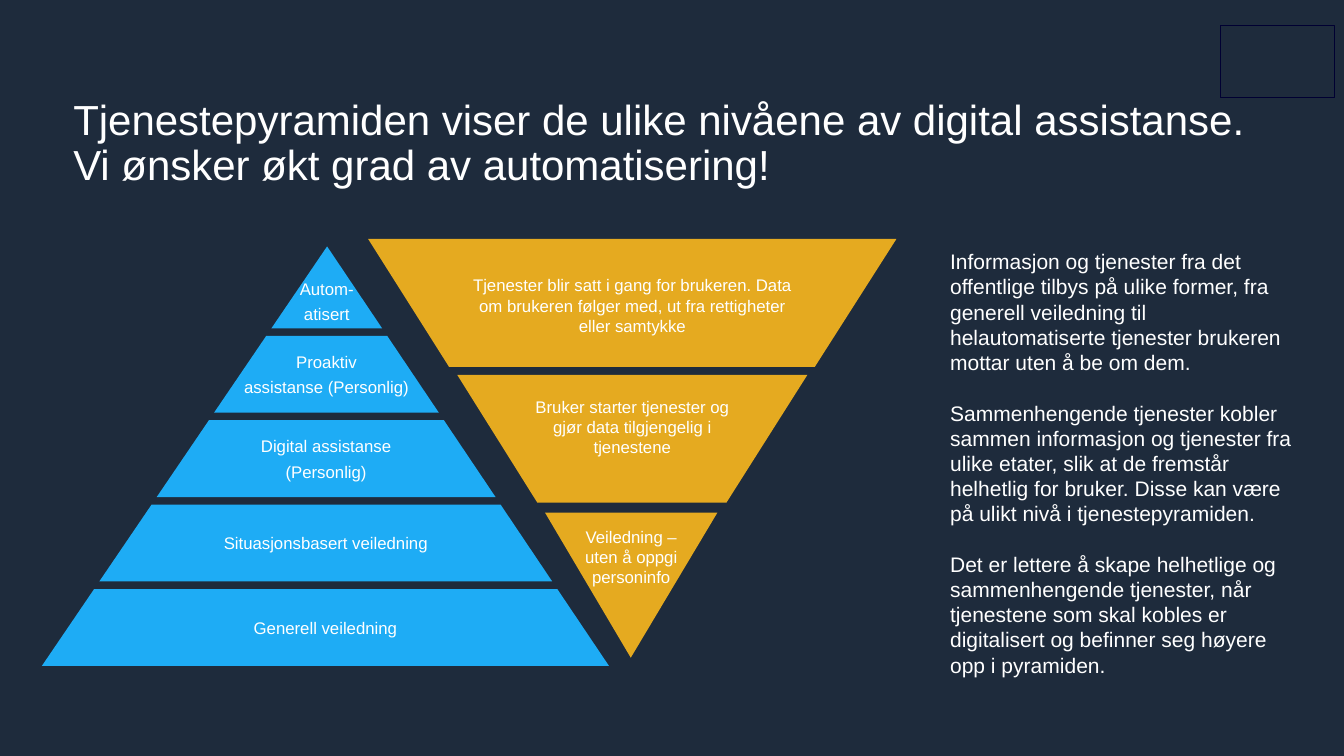
from lxml.etree import SubElement
from pptx import Presentation
from pptx.dml.color import RGBColor
from pptx.enum.shapes import MSO_SHAPE as Shape
from pptx.enum.text import MSO_ANCHOR as Anchor, MSO_AUTO_SIZE as AutoSize, PP_ALIGN as Align
from pptx.oxml.ns import qn
from pptx.util import Pt

NAVY, WHITE, BLUE, GOLD, FRAME = "1E2B3C", "FFFFFF", "1EACF5", "E5AA20", "000032"

TITLE = ("Tjenestepyramiden viser de ulike nivåene av digital assistanse.\n"
         "Vi ønsker økt grad av automatisering!")
EXPLANATION = [
    "Informasjon og tjenester fra det offentlige tilbys på ulike former, fra generell "
    "veiledning til helautomatiserte tjenester brukeren mottar uten å be om dem.",
    "Sammenhengende tjenester kobler sammen informasjon og tjenester fra ulike etater, slik "
    "at de fremstår helhetlig for bruker. Disse kan være på ulikt nivå i tjenestepyramiden.",
    "Det er lettere å skape helhetlige og sammenhengende tjenester, når tjenestene som skal "
    "kobles er digitalisert og befinner seg høyere opp i pyramiden.",
]
LEVELS = [
    ["Proaktiv", "assistanse (Personlig)"],
    ["Digital assistanse", "(Personlig)"],
    ["Situasjonsbasert veiledning"],
    ["Generell veiledning"],
]
APEX_X, APEX_Y, CAP_BOTTOM = 311.6, 234.7, 312.7
LEFT_SLOPE, RIGHT_SLOPE = 0.68, 0.672
LEVEL_TOP, LEVEL_PITCH, LEVEL_HEIGHT = 319.8, 80.4, 73.2

STAGES = [
    ((227.5, 349.3), (350.6, 853.9), (427.7, 776.2),
     (439.2, 258.5, 326.2, 65.5),
     ["Tjenester blir satt i gang for brukeren. Data om brukeren følger med, "
      "ut fra rettigheter eller samtykke"]),
    ((357.1, 478.8), (435.6, 769), (511.9, 691.9),
     (493.2, 374.4, 218.2, 65.5),
     ["Bruker starter tjenester og gjør data tilgjengelig i tjenestene"]),
    ((488.2, 626.4), (519.1, 683.3), (600.8, 600.8),
     (519.1, 498.2, 164.2, 85),
     ["Veiledning –", "uten å oppgi personinfo"]),
]


def rgb(hex_color):
    """Turn a hex string into a colour."""
    return RGBColor.from_string(hex_color)


def place(part, left, top, width, height):
    """Move and size an element, in points."""
    part.left, part.top, part.width, part.height = map(Pt, (left, top, width, height))


def write(frame, paragraphs, size, align, gap=0):
    """Fill a text frame with white Arial paragraphs separated by a gap."""
    frame.word_wrap = True
    for index, wording in enumerate(paragraphs):
        paragraph = frame.add_paragraph() if index else frame.paragraphs[0]
        paragraph.text = wording
        paragraph.alignment = align
        paragraph.space_before = Pt(gap if index else 0)
        for run in paragraph.runs:
            run.font.name, run.font.size = "Arial", Pt(size)
            run.font.color.rgb = rgb(WHITE)


def add_band(shapes, rows, top_edges, bottom_edges, color):
    """Draw a horizontal slice of a pyramid between two heights."""
    top, bottom = rows
    corners = [(top_edges[0], top), (top_edges[1], top),
               (bottom_edges[1], bottom), (bottom_edges[0], bottom)]
    start, *rest = dict.fromkeys((Pt(x), Pt(y)) for x, y in corners)
    builder = shapes.build_freeform(*start)
    builder.add_line_segments(rest)
    band = builder.convert_to_shape()
    band.shadow.inherit = False
    band.fill.solid()
    band.fill.fore_color.rgb = rgb(color)
    band.line.fill.background()
    return band


def pyramid_edges(y):
    """Give the left and right edge of the service pyramid at a height."""
    depth = y - APEX_Y
    return APEX_X - LEFT_SLOPE * depth, APEX_X + RIGHT_SLOPE * depth


def add_level(shapes, top, bottom, label):
    """Add one labelled level of the service pyramid."""
    level = add_band(shapes, (top, bottom), pyramid_edges(top), pyramid_edges(bottom), BLUE)
    level.text_frame.vertical_anchor = Anchor.MIDDLE
    write(level.text_frame, label, 16, Align.CENTER, 5.3)
    return level


def add_pyramid(shapes):
    """Stack the levels from the widest up to the tip."""
    for index, label in reversed(list(enumerate(LEVELS))):
        top = LEVEL_TOP + index * LEVEL_PITCH
        add_level(shapes, top, top + LEVEL_HEIGHT, label)
    tip = add_level(shapes, APEX_Y, CAP_BOTTOM, ["Autom-", "atisert"])
    tip.text_frame.margin_top = Pt(30)


def add_inverted_pyramid(shapes):
    """Group the inverted stages with their descriptions."""
    stages = shapes.add_group_shape().shapes
    for rows, top_edges, bottom_edges, area, description in STAGES:
        add_band(stages, rows, top_edges, bottom_edges, GOLD)
        caption = stages.add_textbox(*map(Pt, area))
        write(caption.text_frame, description, 16, Align.CENTER)


def set_title(title):
    """Place and format the slide title."""
    place(title, 69.8, 94.3, 1210.3, 99.4)
    frame = title.text_frame
    frame.margin_left = frame.margin_top = frame.margin_right = frame.margin_bottom = 0
    frame.vertical_anchor = Anchor.TOP
    frame.auto_size = AutoSize.NONE
    write(frame, [TITLE], 40, Align.LEFT)
    frame.paragraphs[0].line_spacing = 0.9


def set_explanation(body):
    """Place and format the explanation without bullets."""
    place(body, 897.8, 233.3, 350.6, 443.5)
    body.text_frame.auto_size = AutoSize.NONE
    write(body.text_frame, EXPLANATION, 20, Align.LEFT, 24)
    for paragraph in body.text_frame.paragraphs:
        properties = paragraph._p.get_or_add_pPr()
        properties.set("marL", "0")
        properties.set("indent", "0")
        SubElement(properties, qn("a:buNone"))


def add_corner_frame(shapes):
    """Add the thin frame in the top right corner."""
    corner = shapes.add_shape(Shape.RECTANGLE, Pt(1162), Pt(23.8), Pt(109.4), Pt(69.1))
    corner.shadow.inherit = False
    corner.fill.solid()
    corner.fill.fore_color.rgb = rgb(NAVY)
    corner.line.color.rgb = rgb(FRAME)
    corner.line.width = Pt(0.75)


def main():
    """Build and save the slide."""
    deck = Presentation()
    deck.slide_width, deck.slide_height = Pt(1280.16), Pt(720)
    slide = deck.slides.add_slide(deck.slide_layouts[1])
    slide.background.fill.solid()
    slide.background.fill.fore_color.rgb = rgb(NAVY)
    set_title(slide.shapes.title)
    add_inverted_pyramid(slide.shapes)
    add_pyramid(slide.shapes)
    set_explanation(slide.placeholders[1])
    add_corner_frame(slide.shapes)
    deck.save("out.pptx")


if __name__ == "__main__":
    main()
